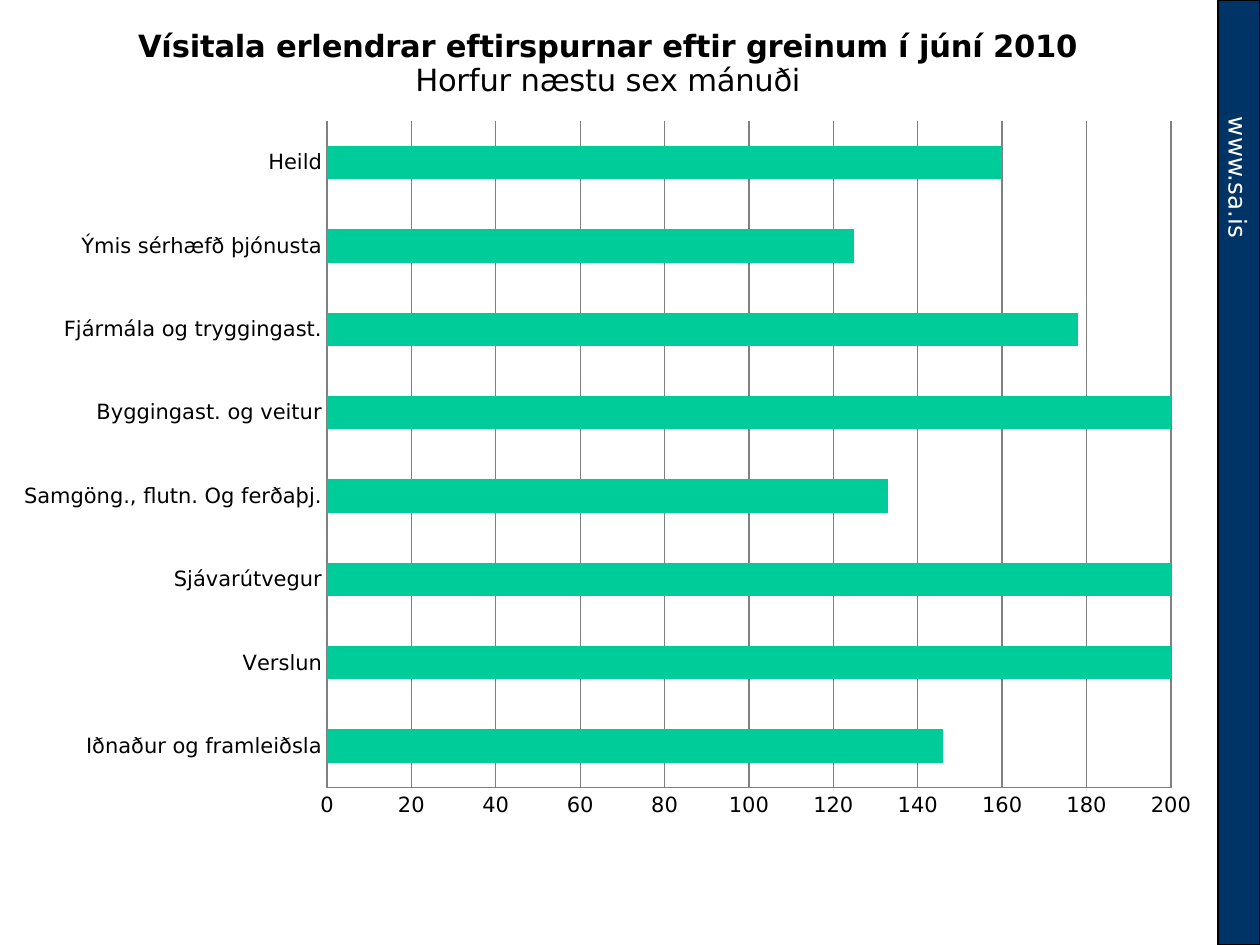
from lxml.etree import SubElement
from pptx import Presentation
from pptx.chart.data import CategoryChartData
from pptx.dml.color import RGBColor
from pptx.enum.chart import XL_CHART_TYPE, XL_TICK_MARK
from pptx.enum.shapes import MSO_SHAPE
from pptx.enum.text import MSO_ANCHOR
from pptx.oxml.ns import qn
from pptx.util import Pt

SCALE = 914400 / 126
FONT = "DejaVu Sans"
W, H = 1260, 945
CHART_W, CHART_H = 1216, 835
color = RGBColor.from_string


def px(*nums):
    """Turn px lengths into a list of EMU."""
    return [round(n * SCALE) for n in nums]


def write(para, text, size=12, bold=False, fill="000000"):
    run = para.add_run()
    run.text = text
    font = run.font
    font.name, font.size, font.bold = FONT, Pt(size), bold
    font.color.rgb = color(fill)


prs = Presentation()
prs.slide_width, prs.slide_height = px(W, H)
slide = prs.slides.add_slide(prs.slide_layouts[6])
shapes = slide.shapes

# Side band with the web address
band = shapes.add_shape(MSO_SHAPE.RECTANGLE, *px(1218, 0, 42, H))
band.shadow.inherit = False
band.fill.solid()
band.fill.fore_color.rgb = color("003366")
band.line.color.rgb = color("000000")
band.line.width = Pt(0.75)

site = shapes.add_textbox(*px(1123, 199, 231, 42))
site.rotation = 90
frame = site.text_frame
frame.word_wrap = True
frame.vertical_anchor = MSO_ANCHOR.MIDDLE
write(frame.paragraphs[0], "www.sa.is", size=14, fill="FFFFFF")

# Demand index by sector, from the bottom bar up
index = {
    "Iðnaður og framleiðsla": 146,
    "Verslun": 200,
    "Sjávarútvegur": 200,
    "Samgöng., flutn. Og ferðaþj.": 133,
    "Byggingast. og veitur": 200,
    "Fjármála og tryggingast.": 178,
    "Ýmis sérhæfð þjónusta": 125,
    "Heild": 160,
}
data = CategoryChartData(number_format="0")
data.categories = list(index)
data.add_series("Series 1", list(index.values()))
chart = shapes.add_chart(
    XL_CHART_TYPE.BAR_CLUSTERED, *px(0, 0, CHART_W, CHART_H), data
).chart
chart.has_legend = False
chart.font.name, chart.font.size = FONT, Pt(12)
chart.font.color.rgb = color("000000")

chart.has_title = True
title = chart.chart_title
title.include_in_layout = False
head = title.text_frame
write(head.paragraphs[0], "Vísitala erlendrar eftirspurnar eftir greinum í júní 2010",
      size=17.5, bold=True)
write(head.add_paragraph(), "Horfur næstu sex mánuði", size=17.5)

bars = chart.plots[0]
bars.vary_by_categories = False
bars.gap_width = 150
fill = bars.series[0].format.fill
fill.solid()
fill.fore_color.rgb = color("00CC99")

cats, vals = chart.category_axis, chart.value_axis
vals.minimum_scale, vals.maximum_scale, vals.major_unit = 0, 200, 20
vals.has_major_gridlines = True
vals.tick_labels.number_format = "0"
vals.tick_labels.number_format_is_linked = False
for axis in (cats, vals):
    axis.major_tick_mark = axis.minor_tick_mark = XL_TICK_MARK.NONE
for part in (cats, vals, vals.major_gridlines):
    part.format.line.color.rgb = color("808080")
    part.format.line.width = Pt(0.75)

# Fixed inner plot area, as shares of the chart
area = chart.element.find(".//" + qn("c:plotArea"))
for old in area.findall(qn("c:layout")):
    area.remove(old)
layout = SubElement(area, qn("c:layout"))
area.insert(0, layout)
manual = SubElement(layout, qn("c:manualLayout"))
for tag, val in (
    ("layoutTarget", "inner"), ("xMode", "edge"), ("yMode", "edge"),
    ("x", 327 / CHART_W), ("y", 121 / CHART_H),
    ("w", 844 / CHART_W), ("h", 667 / CHART_H),
):
    SubElement(manual, qn("c:" + tag)).set("val", str(val))

prs.save("out.pptx")
